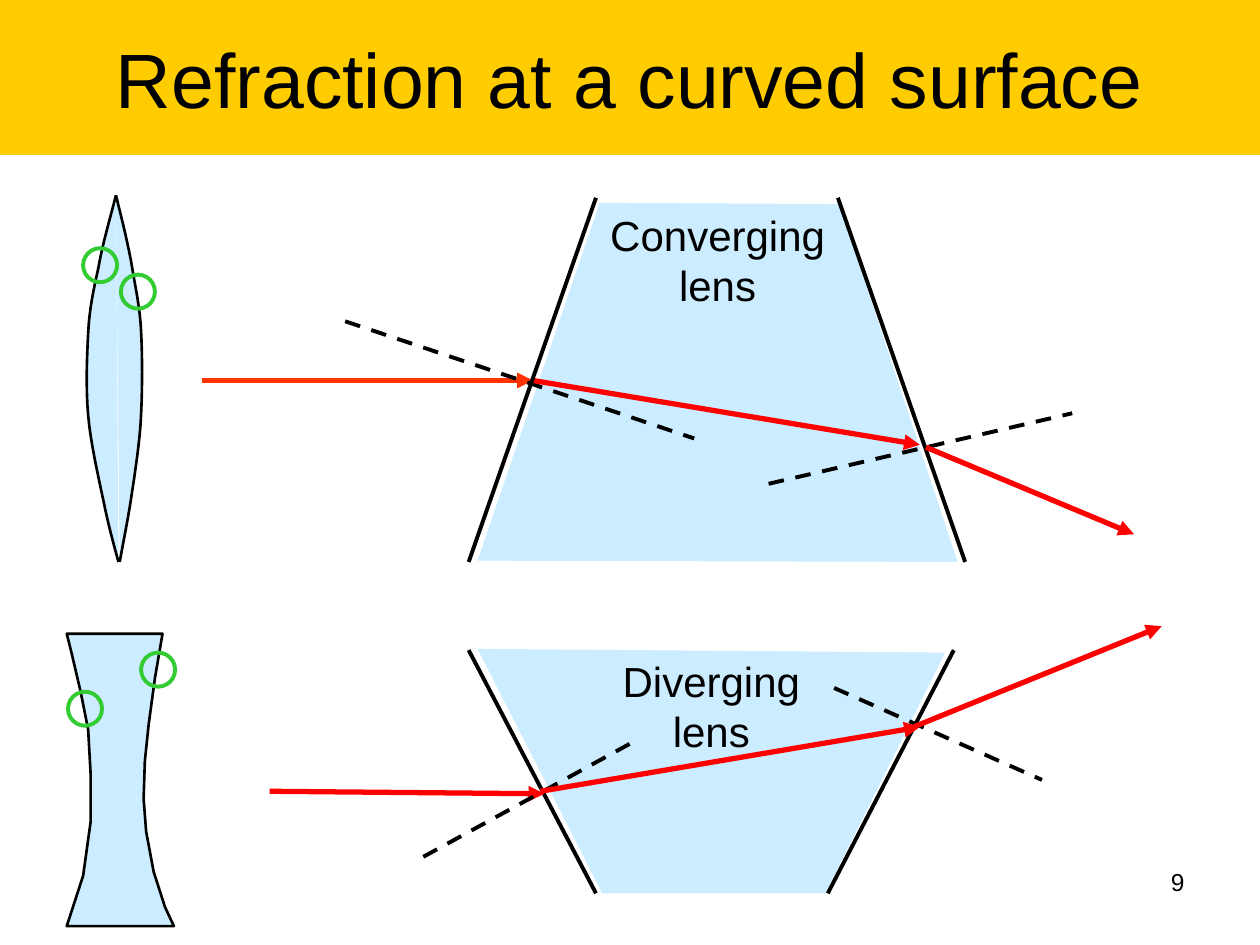
from pptx import Presentation
from pptx.dml.color import RGBColor
from pptx.enum.dml import MSO_LINE
from pptx.enum.shapes import MSO_CONNECTOR, MSO_SHAPE
from pptx.enum.text import MSO_ANCHOR, PP_ALIGN
from pptx.oxml.ns import qn
from pptx.util import Inches, Pt
from lxml.etree import SubElement

BLACK, RED, ORANGE, GREEN = "000000", "FF0000", "FF3300", "33CC33"
GLASS, GOLD = "CCECFF", "FFCC00"


def rgb(hex_code):
    return RGBColor.from_string(hex_code)


def write(sp, lines, size, align, anchor=MSO_ANCHOR.TOP):
    tf = sp.text_frame
    tf.word_wrap = True
    tf.vertical_anchor = anchor
    for i, line in enumerate(lines):
        p = tf.paragraphs[0] if i == 0 else tf.add_paragraph()
        p.alignment = align
        r = p.add_run()
        r.text = line
        r.font.name = "Arial"
        r.font.size = Pt(size)
        r.font.color.rgb = rgb(BLACK)


def add_title(s, text):
    sp = s.shapes.title
    sp.left, sp.top, sp.width, sp.height = 0, 0, Inches(10), Inches(1.23)
    sp.fill.solid()
    sp.fill.fore_color.rgb = rgb(GOLD)
    write(sp, [text], 44, PP_ALIGN.CENTER, MSO_ANCHOR.MIDDLE)


def add_line(s, start, end, color=BLACK, width=2.25):
    ends = [Inches(v) for v in (*start, *end)]
    cn = s.shapes.add_connector(MSO_CONNECTOR.STRAIGHT, *ends)
    cn.line.color.rgb = rgb(color)
    cn.line.width = Pt(width)
    SubElement(cn._element.spPr, qn("a:effectLst"))
    return cn


def add_normal(s, start, end):
    add_line(s, start, end).line.dash_style = MSO_LINE.DASH


def add_ray(s, start, end, color=RED):
    cn = add_line(s, start, end, color, 3)
    SubElement(cn.line._get_or_add_ln(), qn("a:tailEnd"), type="triangle")


def add_glass(s, points, closed=True, outline=None):
    (x, y), *rest = [(Inches(x), Inches(y)) for x, y in points]
    fb = s.shapes.build_freeform(x, y)
    fb.add_line_segments(rest, close=closed)
    sp = fb.convert_to_shape()
    sp.shadow.inherit = False
    sp.fill.solid()
    sp.fill.fore_color.rgb = rgb(GLASS)
    if outline:
        sp.line.color.rgb = rgb(outline)
        sp.line.width = Pt(1.5)
    else:
        sp.line.fill.background()
    return sp


def add_circle(s, left, top):
    sp = s.shapes.add_shape(MSO_SHAPE.OVAL, Inches(left), Inches(top),
                            Inches(0.27), Inches(0.27))
    sp.shadow.inherit = False
    sp.fill.background()
    sp.line.color.rgb = rgb(GREEN)
    sp.line.width = Pt(2.25)


def curve(nodes, steps=8):
    """Points along joined cubic Bezier curves: anchor, control, control, anchor..."""
    points = [nodes[0]]
    for i in range(0, len(nodes) - 1, 3):
        for k in range(1, steps + 1):
            t = k / steps
            weights = ((1 - t) ** 3, 3 * t * (1 - t) ** 2, 3 * t * t * (1 - t), t ** 3)
            points.append(tuple(sum(w * n[axis] for w, n in zip(weights, nodes[i:i + 4]))
                                for axis in (0, 1)))
    return points


def draw_diverging(s):
    block = add_glass(s, [(3.79, 5.15), (4.78, 7.09), (6.55, 7.09), (7.5, 5.18)])
    write(block, ["Diverging", "lens"], 24, PP_ALIGN.CENTER)
    # Whole lens
    add_glass(s, [(0.53, 5.03), (1.29, 5.03), (1.23, 5.38), (1.18, 5.75), (1.15, 6.04),
                  (1.14, 6.34), (1.16, 6.6), (1.22, 6.92), (1.31, 7.2), (1.38, 7.35),
                  (0.53, 7.35), (0.66, 6.95), (0.72, 6.52), (0.72, 6.15), (0.7, 5.79),
                  (0.64, 5.49), (0.57, 5.19)], outline=BLACK)
    # Surfaces, normals and rays
    add_line(s, (3.72, 5.16), (4.73, 7.09))
    add_line(s, (7.57, 5.16), (6.57, 7.09))
    add_ray(s, (2.14, 6.28), (4.32, 6.3))
    add_normal(s, (3.36, 6.8), (5.06, 5.87))
    add_ray(s, (4.29, 6.28), (7.3, 5.77))
    add_normal(s, (6.62, 5.46), (8.27, 6.19))
    add_ray(s, (7.25, 5.77), (9.22, 4.97))
    # Magnified spots
    add_circle(s, 0.54, 5.49)
    add_circle(s, 1.12, 5.18)


def draw_converging(s):
    block = add_glass(s, [(4.76, 1.61), (6.66, 1.62), (7.6, 4.46), (3.79, 4.45)])
    write(block, ["Converging", "lens"], 24, PP_ALIGN.CENTER)
    # Rays, normals and surfaces
    add_ray(s, (1.6, 3.02), (4.23, 3.02), ORANGE)
    add_normal(s, (2.74, 2.55), (5.51, 3.48))
    add_ray(s, (4.23, 3.02), (7.3, 3.53))
    add_normal(s, (6.1, 3.84), (8.51, 3.28))
    add_line(s, (4.73, 1.57), (3.72, 4.46))
    add_line(s, (6.65, 1.57), (7.66, 4.46))
    add_ray(s, (7.35, 3.55), (9, 4.24))
    # Whole lens, left and right halves
    left = [(0.92, 1.55), (0.87, 1.75), (0.81, 1.95), (0.78, 2.13), (0.74, 2.31),
            (0.71, 2.45), (0.7, 2.64), (0.69, 2.83), (0.68, 3.08), (0.7, 3.3),
            (0.72, 3.52), (0.78, 3.78), (0.82, 3.97), (0.86, 4.17), (0.9, 4.31),
            (0.94, 4.46)]
    right = [(0.92, 1.55), (0.97, 1.75), (1.02, 1.95), (1.05, 2.13), (1.08, 2.31),
             (1.11, 2.44), (1.12, 2.63), (1.13, 2.83), (1.13, 3.07), (1.12, 3.29),
             (1.11, 3.51), (1.07, 3.76), (1.04, 3.96), (1.01, 4.15), (0.97, 4.35),
             (0.95, 4.46)]
    for half in (left, right):
        add_glass(s, curve(half), closed=False, outline=BLACK)
    # Magnified spots
    add_circle(s, 0.66, 1.97)
    add_circle(s, 0.96, 2.18)


def main():
    prs = Presentation()
    prs.slide_width, prs.slide_height = Inches(10), Inches(7.5)
    s = prs.slides.add_slide(prs.slide_layouts[5])
    add_title(s, "Refraction at a curved surface")
    # Page number
    number = s.shapes.add_textbox(Inches(8.67), Inches(6.83), Inches(0.83), Inches(0.52))
    write(number, ["9"], 14, PP_ALIGN.RIGHT)
    draw_diverging(s)
    draw_converging(s)
    prs.save("out.pptx")


if __name__ == "__main__":
    main()
